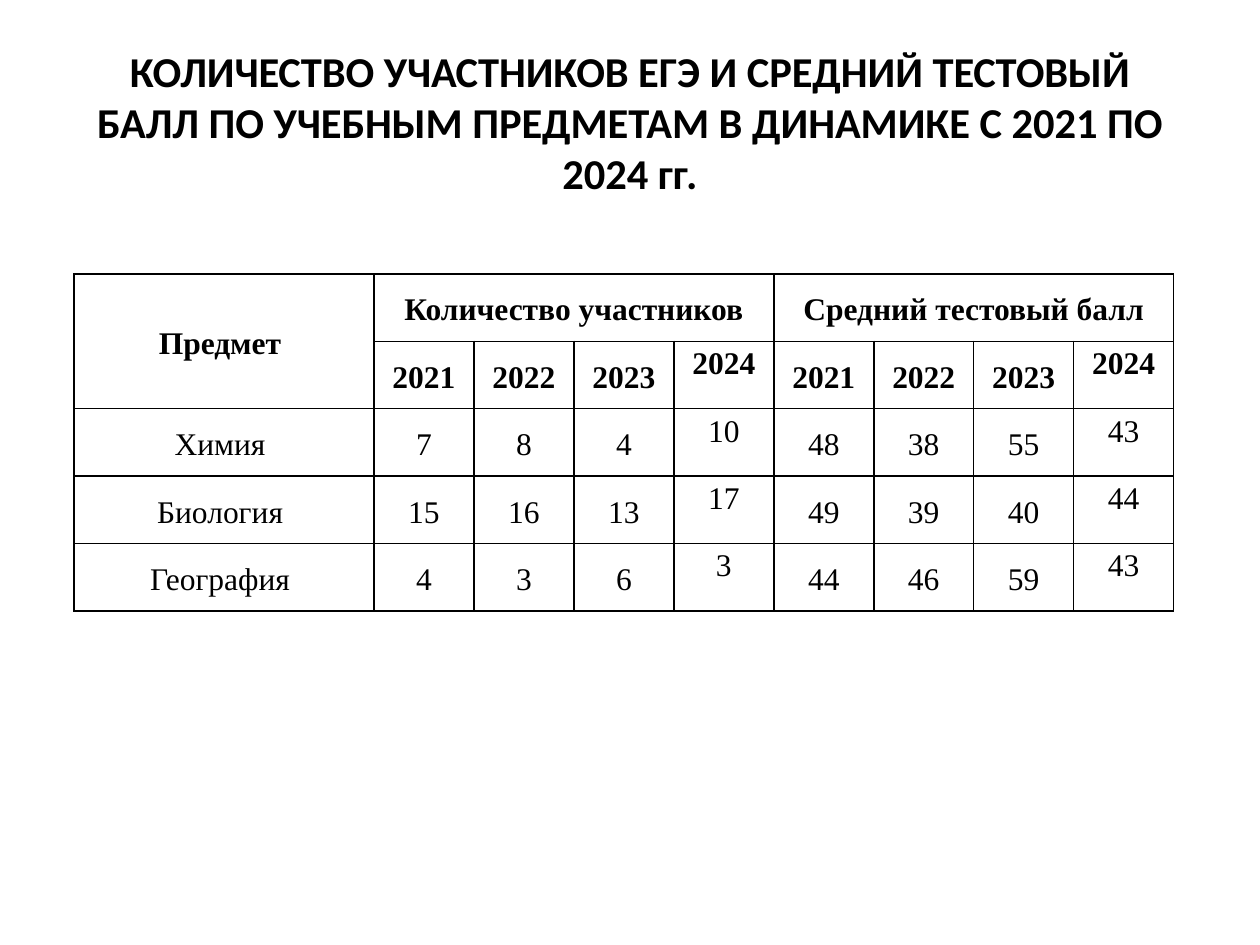
from lxml.etree import SubElement
from pptx import Presentation
from pptx.dml.color import RGBColor
from pptx.enum.text import MSO_ANCHOR as Anchor, MSO_AUTO_SIZE as AutoSize, PP_ALIGN as Align
from pptx.oxml.ns import qn
from pptx.util import Pt

EMU_PER_PX = 914400 / 126
BLACK = "000000"


def px(length):
    return round(length * EMU_PER_PX)


def color(hex_value):
    return RGBColor.from_string(hex_value)


def apply(target, values):
    for name, value in values.items():
        setattr(target, name, value)


class ScoreSlide:
    heading_font = {"name": "Calibri", "size": Pt(24.3), "bold": True}
    table_font = {"name": "Times New Roman", "size": Pt(18)}
    cell_margins = {"margin_left": px(8), "margin_right": px(8),
                    "margin_top": 0, "margin_bottom": 0}
    border_width = Pt(1)

    def __init__(self, deck):
        self.slide = deck.slides.add_slide(deck.slide_layouts[5])

    def text(self, paragraph, words, font, spacing):
        apply(paragraph, {"alignment": Align.CENTER, **spacing})
        run = paragraph.add_run()
        run.text = words
        apply(run.font, font)
        run.font.color.rgb = color(BLACK)

    def title(self, words, left, top, width, height):
        heading = self.slide.shapes.title
        apply(heading, {"left": px(left), "top": px(top),
                        "width": px(width), "height": px(height)})
        # The deep bottom margin lifts the heading away from the table
        apply(heading.text_frame, {
            "word_wrap": True, "auto_size": AutoSize.NONE,
            "vertical_anchor": Anchor.MIDDLE, "margin_bottom": px(84)})
        self.text(heading.text_frame.paragraphs[0], words, self.heading_font, {})

    def table(self, left, top, col_widths, height, row_count):
        frame = self.slide.shapes.add_table(
            row_count, len(col_widths), px(left), px(top),
            px(sum(col_widths)), px(height))
        grid = frame.table
        apply(grid, {"first_row": False, "horz_banding": False})
        for column, width in zip(grid.columns, col_widths):
            column.width = px(width)
        for row in grid.rows:
            row.height = px(height) // row_count
        for cell in grid.iter_cells():
            apply(cell, self.cell_margins)
            self.border(cell)
            cell.fill.background()
        return grid

    def border(self, cell):
        properties = cell._tc.get_or_add_tcPr()
        for side in ("a:lnL", "a:lnR", "a:lnT", "a:lnB"):
            line = SubElement(properties, qn(side), w=str(self.border_width))
            fill = SubElement(line, qn("a:solidFill"))
            SubElement(fill, qn("a:srgbClr"), val=BLACK)

    def cell(self, cell, words, bold=False, anchor=Anchor.MIDDLE):
        cell.vertical_anchor = anchor
        spacing = {"line_spacing": 1.15}
        if not bold:
            spacing["space_after"] = Pt(6)
        self.text(cell.text_frame.paragraphs[0], words,
                  {**self.table_font, "bold": bold}, spacing)


YEARS = ["2021", "2022", "2023", "2024"]
MEASURES = ["Количество участников", "Средний тестовый балл"]
RESULTS = {
    "Химия ": [7, 8, 4, 10, 48, 38, 55, 43],
    "Биология ": [15, 16, 13, 17, 49, 39, 40, 44],
    "География ": [4, 3, 6, 3, 44, 46, 59, 43],
}


def main():
    deck = Presentation()
    apply(deck, {"slide_width": px(1260), "slide_height": px(945)})
    page = ScoreSlide(deck)

    # Heading
    page.title("КОЛИЧЕСТВО УЧАСТНИКОВ ЕГЭ И СРЕДНИЙ ТЕСТОВЫЙ БАЛЛ ПО УЧЕБНЫМ "
               "ПРЕДМЕТАМ В ДИНАМИКЕ С 2021 ПО 2024 гг.", 63, 76, 1134, 169)

    # Table header: subject beside two measures, each split by year
    year_columns = YEARS * len(MEASURES)
    scores = page.table(74, 274, [300] + [100] * len(year_columns), 337,
                        2 + len(RESULTS))
    scores.cell(0, 0).merge(scores.cell(1, 0))
    page.cell(scores.cell(0, 0), "Предмет ", bold=True)
    for index, measure in enumerate(MEASURES):
        first = 1 + index * len(YEARS)
        scores.cell(0, first).merge(scores.cell(0, first + len(YEARS) - 1))
        page.cell(scores.cell(0, first), measure, bold=True)

    # Years and results; the latest year sits at the top of its cells
    for row, values in enumerate([year_columns, *RESULTS.values()], start=1):
        for col, (year, value) in enumerate(zip(year_columns, values), start=1):
            anchor = Anchor.TOP if year == YEARS[-1] else Anchor.MIDDLE
            page.cell(scores.cell(row, col), str(value), row == 1, anchor)

    # Subjects
    for row, subject in enumerate(RESULTS, start=2):
        page.cell(scores.cell(row, 0), subject)

    deck.save("out.pptx")


if __name__ == "__main__":
    main()
